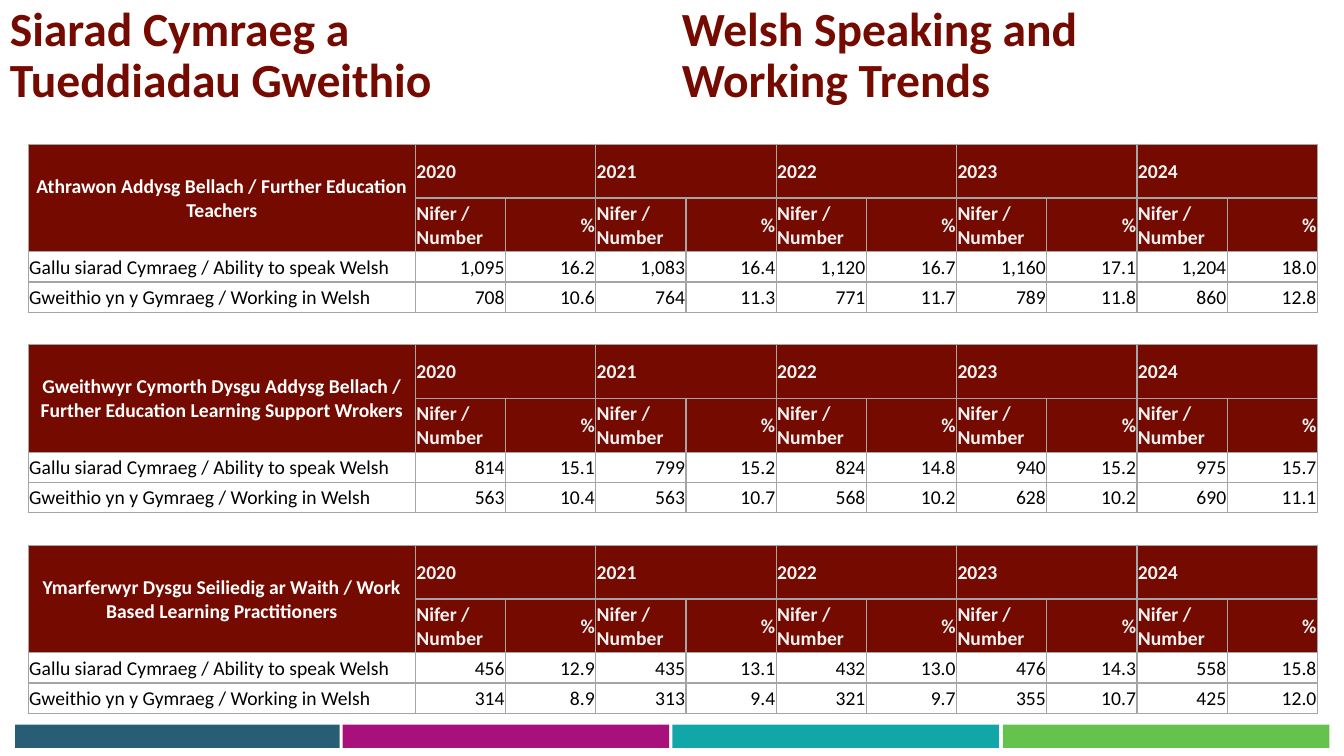
from lxml import etree
from pptx import Presentation
from pptx import util as u
from pptx.dml.color import RGBColor
from pptx.enum import shapes, text
from pptx.oxml.ns import qn

Pt = u.Pt
MAROON = RGBColor(0x75, 0x0A, 0x00)
WHITE = RGBColor(0xFF, 0xFF, 0xFF)
PALE = RGBColor(0xF2, 0xF2, 0xF2)
BLACK = RGBColor(0x00, 0x00, 0x00)
GREY = RGBColor(0xA5, 0xA5, 0xA5)
BLUE = RGBColor(0x29, 0x5D, 0x75)
MAGENTA = RGBColor(0xA8, 0x11, 0x7C)
TEAL = RGBColor(0x11, 0xA6, 0xA8)
GREEN = RGBColor(0x65, 0xC2, 0x4C)
LEFT, CENTER, RIGHT = text.PP_ALIGN.LEFT, text.PP_ALIGN.CENTER, text.PP_ALIGN.RIGHT

YEARS = ["2020", "2021", "2022", "2023", "2024"]
SPEAK = "Gallu siarad Cymraeg / Ability to speak Welsh"
WORK = "Gweithio yn y Gymraeg / Working in Welsh"
GROUPS = [
    ("Athrawon Addysg Bellach / Further Education Teachers",
     "1,095 16.2 1,083 16.4 1,120 16.7 1,160 17.1 1,204 18.0",
     "708 10.6 764 11.3 771 11.7 789 11.8 860 12.8"),
    ("Gweithwyr Cymorth Dysgu Addysg Bellach / Further Education Learning Support Wrokers",
     "814 15.1 799 15.2 824 14.8 940 15.2 975 15.7",
     "563 10.4 563 10.7 568 10.2 628 10.2 690 11.1"),
    ("Ymarferwyr Dysgu Seiliedig ar Waith / Work Based Learning Practitioners",
     "456 12.9 435 13.1 432 13.0 476 14.3 558 15.8",
     "314 8.9 313 9.4 321 9.7 355 10.7 425 12.0"),
]
LABEL_WIDTH, VALUE_WIDTH = 276.5, 64.44
ROW_HEIGHTS = [38.4, 38.4, 21.6, 21.6]


def add_borders(cell):
    properties = cell._tc.get_or_add_tcPr()
    for side in ("a:lnL", "a:lnR", "a:lnT", "a:lnB"):
        line = etree.SubElement(properties, qn(side), w=str(Pt(1)))
        fill = etree.SubElement(line, qn("a:solidFill"))
        etree.SubElement(fill, qn("a:srgbClr"), val=str(GREY))


def write_text(frame, words, size, color, bold, align=LEFT):
    para = frame.paragraphs[0]
    para.text = words
    para.alignment = align
    para.font.name = "Calibri"
    para.font.size = Pt(size)
    para.font.bold = bold
    para.font.color.rgb = color
    return para


deck = Presentation()
deck.slide_width, deck.slide_height = Pt(960), Pt(540)
page = deck.slides.add_slide(deck.slide_layouts[6])

# Coloured footer strip
for left, width, color in [(10.8, 231.8, BLUE), (244.8, 233.3, MAGENTA),
                           (480.3, 233.3, TEAL), (716.4, 233.3, GREEN)]:
    bar = page.shapes.add_shape(shapes.MSO_SHAPE.RECTANGLE,
                                Pt(left), Pt(517.7), Pt(width), Pt(16.6))
    bar.shadow.inherit = False
    bar.fill.solid()
    bar.fill.fore_color.rgb = color
    bar.line.fill.background()

# Welsh and English titles
for left, width, height, title in [(0, 376, 93, "Siarad Cymraeg a Tueddiadau Gweithio"),
                                   (480, 397, 81, "Welsh Speaking and Working Trends")]:
    box = page.shapes.add_textbox(Pt(left), Pt(0), Pt(width), Pt(height))
    box.text_frame.word_wrap = True
    para = write_text(box.text_frame, title, 34, MAROON, True)
    para.line_spacing = 0.9

# One table for each workforce group
for index, (group, speaking, working) in enumerate(GROUPS):
    rows = [
        [group] + [words for year in YEARS for words in (year, "")],
        [""] + ["Nifer / Number", "%"] * len(YEARS),
        [SPEAK] + speaking.split(),
        [WORK] + working.split(),
    ]
    columns = len(rows[0])
    frame = page.shapes.add_table(
        len(rows), columns, Pt(20.2), Pt(103.1 + 143.2 * index),
        Pt(LABEL_WIDTH + VALUE_WIDTH * (columns - 1)), Pt(sum(ROW_HEIGHTS)))
    table = frame.table
    table.first_row = table.horz_banding = False
    for number, column in enumerate(table.columns):
        column.width = Pt(VALUE_WIDTH if number else LABEL_WIDTH)

    for r, row in enumerate(rows):
        table.rows[r].height = Pt(ROW_HEIGHTS[r])
        header = r < 2
        for c, words in enumerate(row):
            cell = table.cell(r, c)
            add_borders(cell)
            if header:
                cell.fill.solid()
                cell.fill.fore_color.rgb = MAROON
                color = PALE if c else WHITE
            else:
                cell.fill.background()
                color = BLACK
            cell.margin_left = cell.margin_right = cell.margin_top = Pt(0.7)
            cell.margin_bottom = Pt(0)
            cell.vertical_anchor = text.MSO_ANCHOR.MIDDLE
            if c == 0:
                align = CENTER if header else LEFT
            else:
                align = LEFT if r == 0 or (header and c % 2) else RIGHT
            write_text(cell.text_frame, words, 14, color, header, align)

    table.cell(0, 0).merge(table.cell(1, 0))
    for c in range(1, columns, 2):
        table.cell(0, c).merge(table.cell(0, c + 1))

deck.save("out.pptx")
